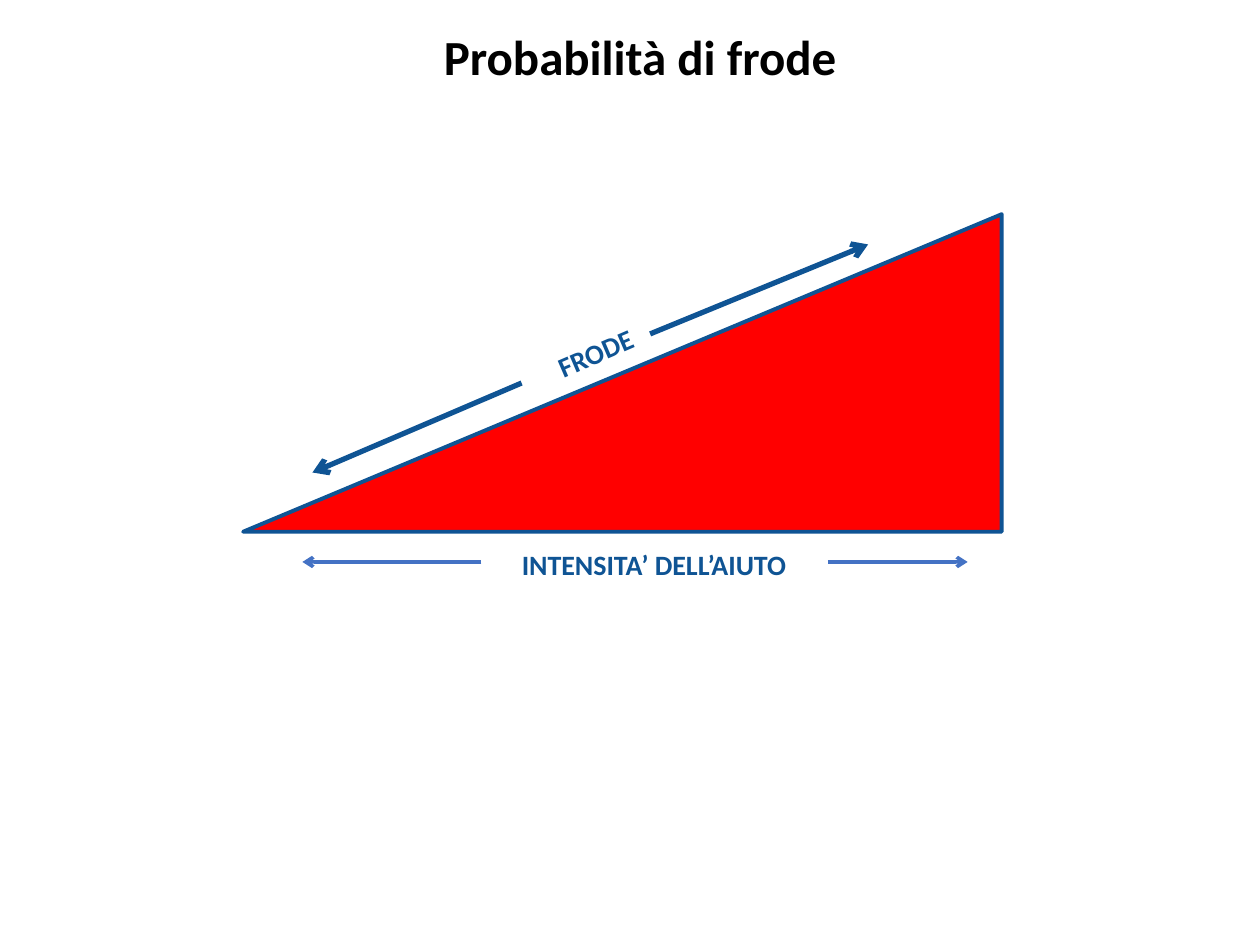
from lxml import etree
from pptx import Presentation
from pptx.dml.color import RGBColor
from pptx.enum import shapes, text
from pptx.oxml import ns
from pptx.util import Inches, Pt

COLORS = {"navy": "0F5494", "blue": "4472C4", "red": "FF0000", "black": "000000"}
FONT = "Calibri"


def rgb(name):
    return RGBColor.from_string(COLORS[name])


def place(sp, left, top, width, height):
    sp.left, sp.top = Inches(left), Inches(top)
    sp.width, sp.height = Inches(width), Inches(height)


def write(sp, content, size, color):
    """Fill a shape with one bold, centred line at its top."""
    tf = sp.text_frame
    tf.word_wrap = True
    tf.auto_size = text.MSO_AUTO_SIZE.NONE
    tf.vertical_anchor = text.MSO_ANCHOR.TOP
    p = tf.paragraphs[0]
    p.text = content
    p.alignment = text.PP_ALIGN.CENTER
    p.font.name, p.font.size, p.font.bold = FONT, Pt(size), True
    p.font.color.rgb = rgb(color)
    return p


def set_title(s, content):
    sp = s.shapes.title
    place(sp, 0.83, 0.21, 8.5, 1.61)
    p = write(sp, content, 28, "black")
    p.line_spacing = 0.9
    p.space_before = Pt(0)


def add_triangle(s):
    sp = s.shapes.add_shape(shapes.MSO_SHAPE.ISOSCELES_TRIANGLE,
                            Inches(1.93), Inches(1.7), Inches(6.02), Inches(2.52))
    sp.adjustments[0] = 1  # apex above the right corner
    sp.shadow.inherit = False
    sp.fill.solid()
    sp.fill.fore_color.rgb = rgb("red")
    sp.line.color.rgb = rgb("navy")
    sp.line.width = Pt(2.25)


def add_label(s, content, left, top, rotation=0):
    sp = s.shapes.add_textbox(Inches(left), Inches(top), Inches(3.52), Inches(0.55))
    sp.rotation = rotation
    write(sp, content, 16, "navy")


def add_arrow(s, start, end, color, width):
    sp = s.shapes.add_connector(shapes.MSO_CONNECTOR.STRAIGHT,
                                *map(Inches, start + end))
    sp.line.color.rgb = rgb(color)
    sp.line.width = Pt(width)
    etree.SubElement(sp.line._get_or_add_ln(), ns.qn("a:tailEnd"), type="arrow")
    etree.SubElement(sp._element.spPr, ns.qn("a:effectLst"))


def main():
    prs = Presentation()
    prs.slide_width, prs.slide_height = Inches(10), Inches(7.5)
    s = prs.slides.add_slide(prs.slide_layouts[5])

    set_title(s, "Probabilità di frode")
    add_triangle(s)

    add_label(s, "FRODE", 3, 2.61, rotation=336.7)
    add_arrow(s, (4.14, 3.04), (2.48, 3.75), "navy", 3)
    add_arrow(s, (5.16, 2.65), (6.89, 1.94), "navy", 3)

    add_label(s, "INTENSITA’ DELL’AIUTO", 3.43, 4.3)
    add_arrow(s, (3.82, 4.46), (2.4, 4.46), "blue", 2)
    add_arrow(s, (6.57, 4.46), (7.68, 4.46), "blue", 2)

    prs.save("out.pptx")


if __name__ == "__main__":
    main()
